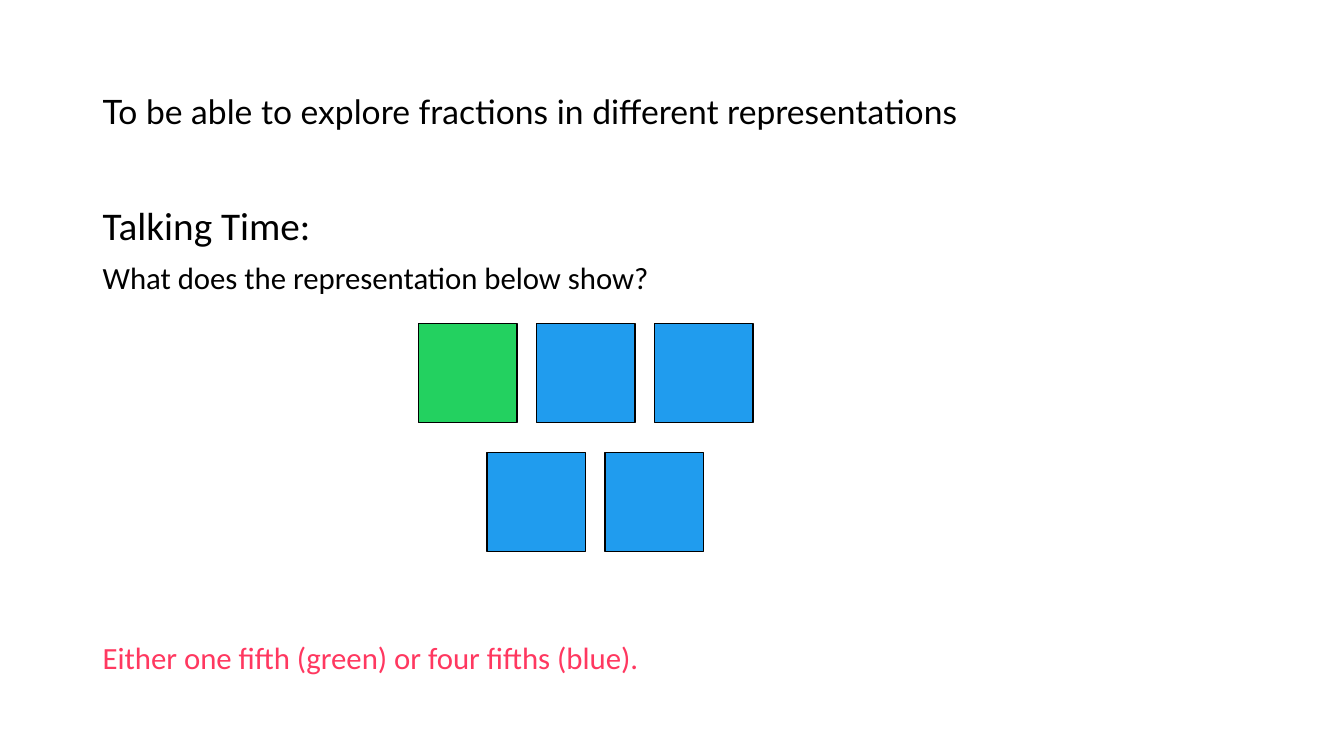
import pptx
import pptx.util
import pptx.dml.color
import pptx.enum.shapes
import pptx.enum.text

Inches = pptx.util.Inches
Pt = pptx.util.Pt
RGBColor = pptx.dml.color.RGBColor

# Content
TITLE = "To be able to explore fractions in different representations"
HEADING = "Talking Time:"
QUESTION = "What does the representation below show?"
ANSWER = "Either one fifth (green) or four fifths (blue)."
# Each row of squares: left, top, colours
SQUARE_ROWS = [
    (4.15, 3.21, ["green", "blue", "blue"]),
    (4.83, 4.49, ["blue", "blue"]),
]

THEME = {
    "colours": {"text": "000000", "answer": "FF3860", "outline": "000000",
                "green": "23D160", "blue": "209CEE"},
    "sizes": {"title": 24, "heading": 28, "body": 22},
    "fonts": {"title": "Lato", "body": "Calibri"},
}

# Layout in inches
TEXT_LEFT = 0.92
SQUARE_SIZE = 0.98
SQUARE_PITCH = 1.17


def colour(name):
    return RGBColor.from_string(THEME["colours"][name])


def add_paragraph(frame, text, size="body", font="body", ink="text"):
    """Write text in the first free paragraph of the frame."""
    first = not frame.text
    paragraph = frame.paragraphs[0] if first else frame.add_paragraph()
    paragraph.line_spacing = 0.9
    paragraph.space_before = Pt(0 if first else 10)
    run = paragraph.add_run()
    run.text = text
    run.font.name = THEME["fonts"][font]
    run.font.size = Pt(THEME["sizes"][size])
    run.font.color.rgb = colour(ink)


def add_frame(slide, top, width, height, anchor="TOP"):
    box = slide.shapes.add_textbox(
        Inches(TEXT_LEFT), Inches(top), Inches(width), Inches(height))
    frame = box.text_frame
    frame.word_wrap = True
    frame.vertical_anchor = pptx.enum.text.MSO_ANCHOR[anchor]
    return frame


def add_square(slide, left, top, fill):
    square = slide.shapes.add_shape(
        pptx.enum.shapes.MSO_SHAPE.RECTANGLE, Inches(left), Inches(top),
        Inches(SQUARE_SIZE), Inches(SQUARE_SIZE))
    square.shadow.inherit = False
    square.fill.solid()
    square.fill.fore_color.rgb = colour(fill)
    square.line.color.rgb = colour("outline")
    square.line.width = Pt(1)


def main():
    presentation = pptx.Presentation()
    presentation.slide_width = Inches(13.33)
    presentation.slide_height = Inches(7.5)
    slide = presentation.slides.add_slide(presentation.slide_layouts[6])

    # Title
    title = add_frame(slide, 0.4, 9.6, 1.45, anchor="MIDDLE")
    add_paragraph(title, TITLE, size="title", font="title")

    # Question
    question = add_frame(slide, 2, 11.5, 1.05)
    add_paragraph(question, HEADING, size="heading")
    add_paragraph(question, QUESTION)

    # Squares
    for left, top, fills in SQUARE_ROWS:
        for column, fill in enumerate(fills):
            add_square(slide, left + column * SQUARE_PITCH, top, fill)

    # Answer
    answer = add_frame(slide, 6.33, 11.5, 0.45)
    add_paragraph(answer, ANSWER, ink="answer")

    presentation.save("out.pptx")


if __name__ == "__main__":
    main()
